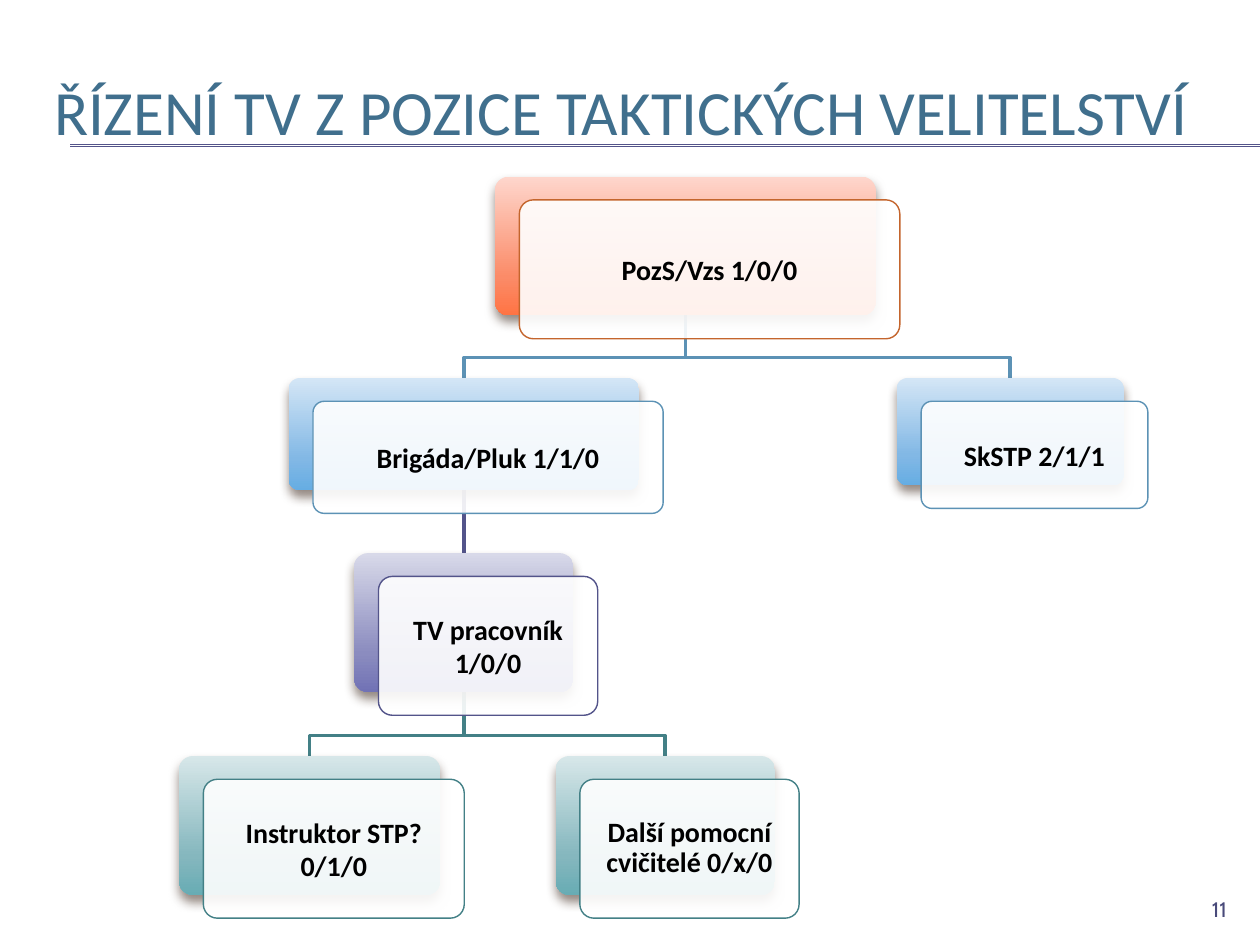
import lxml.etree
import pptx
import pptx.dml.color
import pptx.enum.shapes
import pptx.enum.text
import pptx.oxml
import pptx.oxml.ns
import pptx.util

Cm = pptx.util.Cm
Pt = pptx.util.Pt
RGBColor = pptx.dml.color.RGBColor
qn = pptx.oxml.ns.qn
MSO_SHAPE = pptx.enum.shapes.MSO_SHAPE
PP_ALIGN = pptx.enum.text.PP_ALIGN
MSO_ANCHOR = pptx.enum.text.MSO_ANCHOR

WHITE = RGBColor(0xFF, 0xFF, 0xFF)
BLACK = RGBColor(0x00, 0x00, 0x00)
TITLE_BLUE = RGBColor(0x40, 0x6F, 0x8D)
NUMBER_VIOLET = RGBColor(0x49, 0x4A, 0x7A)
SHADOW_BROWN = RGBColor(0x4E, 0x3B, 0x30)
ORANGE = RGBColor(0xC4, 0x65, 0x2D)
BLUE = RGBColor(0x5C, 0x92, 0xB5)
VIOLET = RGBColor(0x53, 0x54, 0x8A)
TEAL = RGBColor(0x43, 0x80, 0x86)

# Gradient of the back card for each outline colour, top to bottom
GRADIENTS = {
    ORANGE: (RGBColor(0xFE, 0xD6, 0xCC), RGBColor(0xFB, 0x8B, 0x68), RGBColor(0xFF, 0x74, 0x44)),
    BLUE: (RGBColor(0xD4, 0xE6, 0xF6), RGBColor(0x82, 0xB8, 0xE5), RGBColor(0x66, 0xAD, 0xE3)),
    VIOLET: (RGBColor(0xD8, 0xD9, 0xE9), RGBColor(0x8B, 0x8C, 0xBF), RGBColor(0x71, 0x72, 0xB5)),
    TEAL: (RGBColor(0xD7, 0xE7, 0xE9), RGBColor(0x85, 0xB7, 0xBE), RGBColor(0x68, 0xAC, 0xB4)),
}
STOPS = (0, 72000, 100000)

# Units: text, parent, colour, left, top, width, height (cm), line spacing
UNITS = [
    ("PozS/Vzs 1/0/0", None, ORANGE, 9.98, 3.56, 7.67, 2.8, 1.0),
    ("Brigáda/Pluk 1/1/0", 0, BLUE, 5.82, 7.62, 7.06, 2.26, 1.0),
    ("TV pracovník 1/0/0", 1, VIOLET, 7.14, 11.15, 4.42, 2.8, 1.0),
    ("Instruktor STP? 0/1/0", 2, TEAL, 3.61, 15.24, 5.26, 2.8, 1.0),
    ("Další pomocní cvičitelé 0/x/0", 2, TEAL, 11.2, 15.24, 4.42, 2.8, 0.9),
    ("SkSTP 2/1/1", 0, BLUE, 18.08, 7.62, 4.57, 2.16, 1.0),
]
CARD_SHIFT_X, CARD_SHIFT_Y = 0.49, 0.47
BEND_ABOVE_CHILD = 0.41

deck = pptx.Presentation()
deck.slide_width, deck.slide_height = Cm(25.4), Cm(19.05)
page = deck.slides.add_slide(deck.slide_layouts[6])


def add_line(x1, y1, x2, y2, color, width):
    line = page.shapes.add_connector(
        pptx.enum.shapes.MSO_CONNECTOR.STRAIGHT, Cm(x1), Cm(y1), Cm(x2), Cm(y2))
    line.line.color.rgb = color
    line.line.width = Pt(width)
    lxml.etree.SubElement(line._element.spPr, qn("a:effectLst"))


def add_label(text, left, top, width, height, font_name, size, color, align):
    box = page.shapes.add_textbox(Cm(left), Cm(top), Cm(width), Cm(height))
    frame = box.text_frame
    frame.word_wrap = True
    frame.text = text
    para = frame.paragraphs[0]
    para.alignment = align
    font = para.runs[0].font
    font.name, font.size, font.color.rgb = font_name, Pt(size), color
    return frame


# Double rule under the title
for rule_y in (2.92, 2.95):
    add_line(1.42, rule_y, 25.4, rule_y, VIOLET, 0.75)

# Slide number
number = add_label("11", 22.86, 17.98, 2.12, 0.69, "Cabin", 12, NUMBER_VIOLET, PP_ALIGN.RIGHT)
number.vertical_anchor = MSO_ANCHOR.MIDDLE

# Branches from each parent's bottom centre to the child's top centre
for text, parent, color, left, top, width, height, spacing in UNITS:
    if parent is None:
        continue
    parent_left, parent_top, parent_width, parent_height = UNITS[parent][3:7]
    start_x, start_y = parent_left + parent_width / 2, parent_top + parent_height
    end_x, bend_y = left + width / 2, top - BEND_ABOVE_CHILD
    if abs(start_x - end_x) < 0.01:
        add_line(start_x, start_y, end_x, top, color, 2)
        continue
    builder = page.shapes.build_freeform(Cm(start_x), Cm(start_y))
    corners = [(start_x, bend_y), (end_x, bend_y), (end_x, top)]
    builder.add_line_segments([(Cm(x), Cm(y)) for x, y in corners], close=False)
    branch = builder.convert_to_shape()
    branch.fill.background()
    branch.line.color.rgb = color
    branch.line.width = Pt(2)
    branch.shadow.inherit = False

# Cards: shaded back with shadow, translucent front with the text
for text, parent, color, left, top, width, height, spacing in UNITS:
    back = page.shapes.add_shape(
        MSO_SHAPE.ROUNDED_RECTANGLE, Cm(left), Cm(top), Cm(width), Cm(height))
    back.adjustments[0] = 0.1
    back.line.fill.background()
    back.fill.gradient()
    back.fill.gradient_angle = 270
    stop_list = back._element.spPr.find(qn("a:gradFill")).find(qn("a:gsLst"))
    for old_stop in list(stop_list):
        stop_list.remove(old_stop)
    for position, stop_color in zip(STOPS, GRADIENTS[color]):
        stop = lxml.etree.SubElement(stop_list, qn("a:gs"), pos=str(position))
        lxml.etree.SubElement(stop, qn("a:srgbClr"), val=str(stop_color))
    back.shadow.inherit = False
    effects = back._element.spPr.find(qn("a:effectLst"))
    shadow = lxml.etree.SubElement(
        effects, qn("a:outerShdw"), blurRad=str(Pt(6)), dist=str(Pt(4)),
        dir="5400000", rotWithShape="0")
    shade = lxml.etree.SubElement(shadow, qn("a:srgbClr"), val=str(SHADOW_BROWN))
    lxml.etree.SubElement(shade, qn("a:alpha"), val="60000")

    front = page.shapes.add_shape(
        MSO_SHAPE.ROUNDED_RECTANGLE, Cm(left + CARD_SHIFT_X), Cm(top + CARD_SHIFT_Y),
        Cm(width), Cm(height))
    front.adjustments[0] = 0.1
    front.shadow.inherit = False
    front.fill.solid()
    front.fill.fore_color.rgb = WHITE
    fill_color = front._element.spPr.find(qn("a:solidFill")).find(qn("a:srgbClr"))
    lxml.etree.SubElement(fill_color, qn("a:alpha"), val="90000")
    front.line.color.rgb = color
    front.line.width = Pt(0.79)

    frame = front.text_frame
    frame.word_wrap = True
    frame.vertical_anchor = MSO_ANCHOR.MIDDLE
    frame.margin_left = frame.margin_right = Cm(0.17)
    frame.margin_top = frame.margin_bottom = Cm(0.17)
    frame.text = text
    para = frame.paragraphs[0]
    para.alignment = PP_ALIGN.CENTER
    para.line_spacing = spacing
    font = para.runs[0].font
    font.name, font.size, font.bold = "Calibri", Pt(16), True
    font.color.rgb = BLACK

# Title
title = add_label("ŘÍZENÍ TV Z POZICE TAKTICKÝCH VELITELSTVÍ", 0.84, 1.27, 24.13, 1.65,
                  "Calibri", 36, TITLE_BLUE, PP_ALIGN.LEFT)
title.margin_top = Cm(0.2)
title.margin_bottom = Cm(0)

deck.save("out.pptx")
